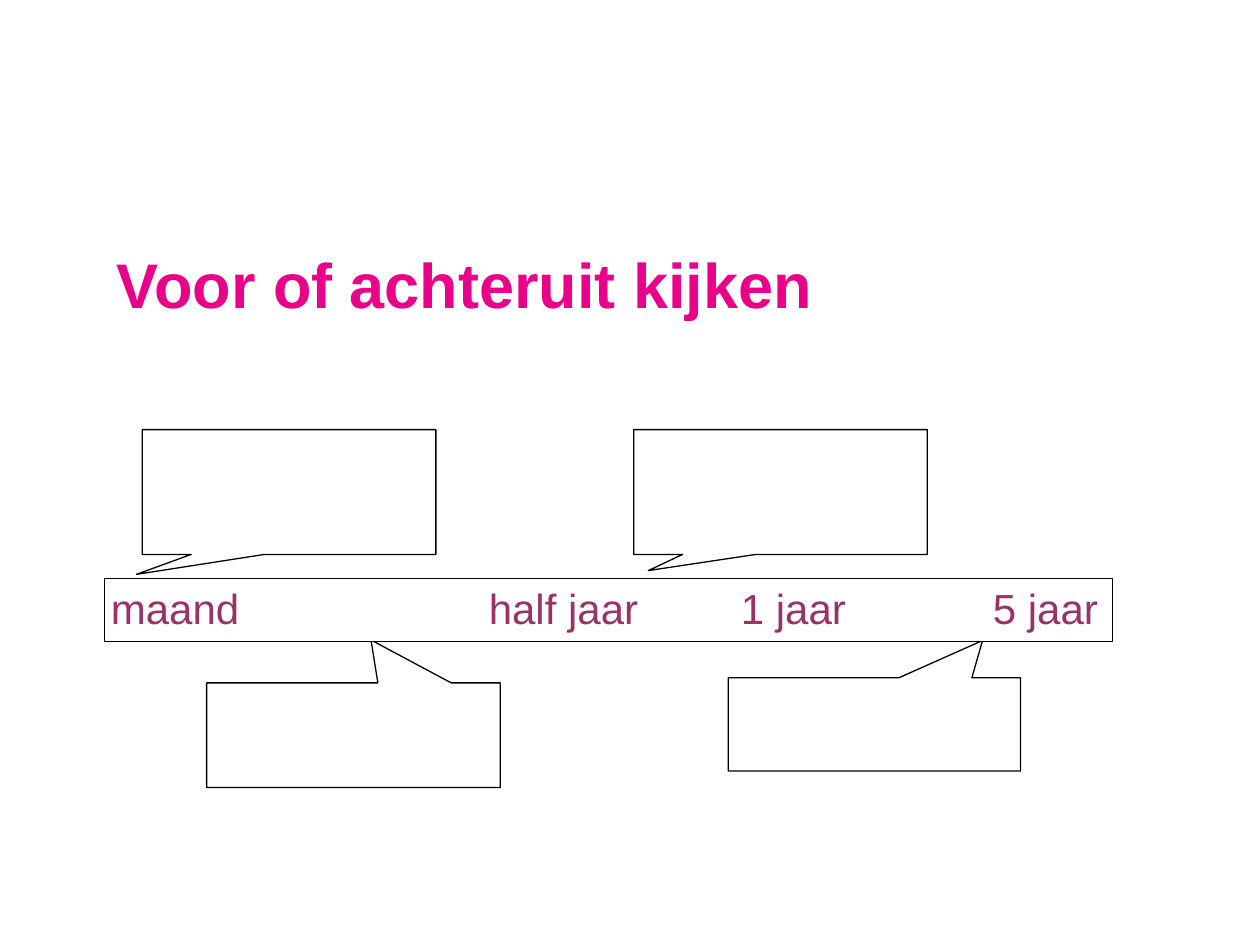
from dataclasses import dataclass

from lxml import etree
from pptx import Presentation
from pptx.dml.color import RGBColor
from pptx.enum.shapes import MSO_SHAPE
from pptx.enum.text import MSO_ANCHOR, PP_ALIGN
from pptx.oxml.ns import qn
from pptx.util import Inches, Pt

RECTANGLE = MSO_SHAPE.RECTANGLE
CALLOUT = MSO_SHAPE.RECTANGULAR_CALLOUT
TOP = MSO_ANCHOR.TOP
MIDDLE = MSO_ANCHOR.MIDDLE
LEFT = PP_ALIGN.LEFT

SLIDE_WIDTH, SLIDE_HEIGHT = Inches(10), Inches(7.5)
COLUMNS, ROWS = 100, 75
WHITE, BLACK, PINK, PLUM = "FFFFFF", "000000", "E90088", "993366"


@dataclass(frozen=True)
class Area:
    column: float
    row: float
    columns: float
    rows: float

    def lengths(self) -> tuple:
        return (
            int(SLIDE_WIDTH * self.column / COLUMNS),
            int(SLIDE_HEIGHT * self.row / ROWS),
            int(SLIDE_WIDTH * self.columns / COLUMNS),
            int(SLIDE_HEIGHT * self.rows / ROWS),
        )


@dataclass(frozen=True)
class Callout:
    area: Area
    tip: tuple[float, float]


TITLE_AREA = Area(8.3, 16.2, 82.6, 12.5)
TIMELINE_AREA = Area(8.3, 45.9, 80, 5)
CALLOUTS = (
    Callout(Area(11.3, 34.1, 23.3, 9.9), (-0.52, 0.66)),
    Callout(Area(50.3, 34.1, 23.3, 9.9), (-0.45, 0.63)),
    Callout(Area(16.4, 54.2, 23.3, 8.3), (0.06, -0.91)),
    Callout(Area(57.8, 53.8, 23.2, 7.4), (0.37, -0.9)),
)


def color(hex_value: str) -> RGBColor:
    return RGBColor.from_string(hex_value)


def add_outlined(slide, preset, area: Area):
    shape = slide.shapes.add_shape(preset, *area.lengths())
    shape.shadow.inherit = False
    shape.fill.solid()
    shape.fill.fore_color.rgb = color(WHITE)
    shape.line.color.rgb = color(BLACK)
    shape.line.width = Pt(0.75)
    return shape


def add_callout(slide, callout: Callout) -> None:
    shape = add_outlined(slide, CALLOUT, callout.area)
    shape.adjustments[0], shape.adjustments[1] = callout.tip


def write(shape, text: str, *, size: float, hex_value: str, bold: bool = False,
          anchor=TOP, inset_x: float = 0.1, inset_y: float = 0.05,
          tab_count: int = 0) -> None:
    frame = shape.text_frame
    frame.word_wrap = True
    frame.vertical_anchor = anchor
    frame.margin_left = frame.margin_right = Inches(inset_x)
    frame.margin_top = frame.margin_bottom = Inches(inset_y)
    paragraph = frame.paragraphs[0]
    paragraph.alignment = LEFT
    if tab_count:
        properties = paragraph._p.get_or_add_pPr()
        tab_list = etree.SubElement(properties, qn("a:tabLst"))
        for inch in range(1, tab_count + 1):
            etree.SubElement(tab_list, qn("a:tab"), pos=str(Inches(inch)), algn="l")
    run = paragraph.add_run()
    run.text = text
    run.font.name = "Arial"
    run.font.size = Pt(size)
    run.font.bold = bold
    run.font.color.rgb = color(hex_value)


def main() -> None:
    presentation = Presentation()
    presentation.slide_width = SLIDE_WIDTH
    presentation.slide_height = SLIDE_HEIGHT
    slide = presentation.slides.add_slide(presentation.slide_layouts[6])
    slide.background.fill.solid()
    slide.background.fill.fore_color.rgb = color(WHITE)

    title = slide.shapes.add_textbox(*TITLE_AREA.lengths())
    write(title, "Voor of achteruit kijken", size=36, hex_value=PINK,
          bold=True, anchor=MIDDLE)

    for callout in CALLOUTS:
        add_callout(slide, callout)

    timeline = add_outlined(slide, RECTANGLE, TIMELINE_AREA)
    write(timeline, "maand\t\thalf jaar\t1 jaar\t\t5 jaar", size=24,
          hex_value=PLUM, inset_x=0.05, inset_y=0.03, tab_count=7)

    presentation.save("out.pptx")


if __name__ == "__main__":
    main()
